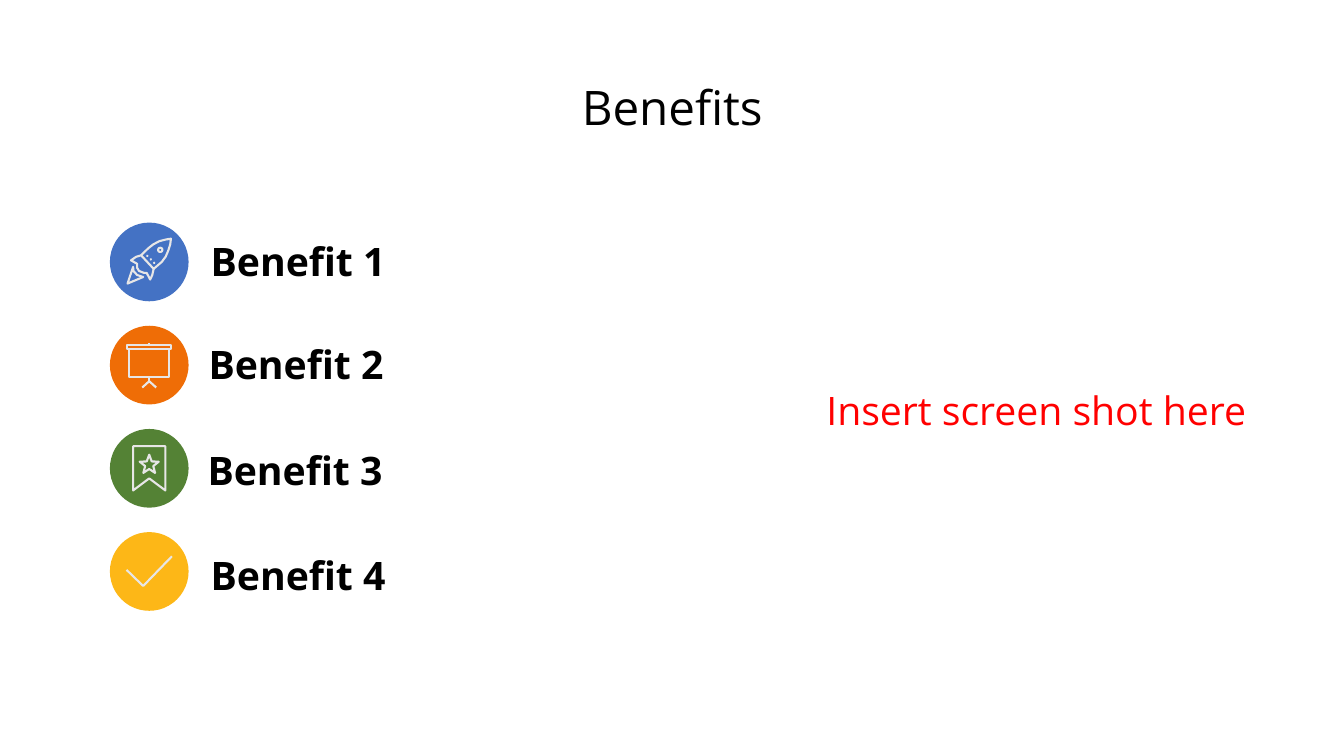
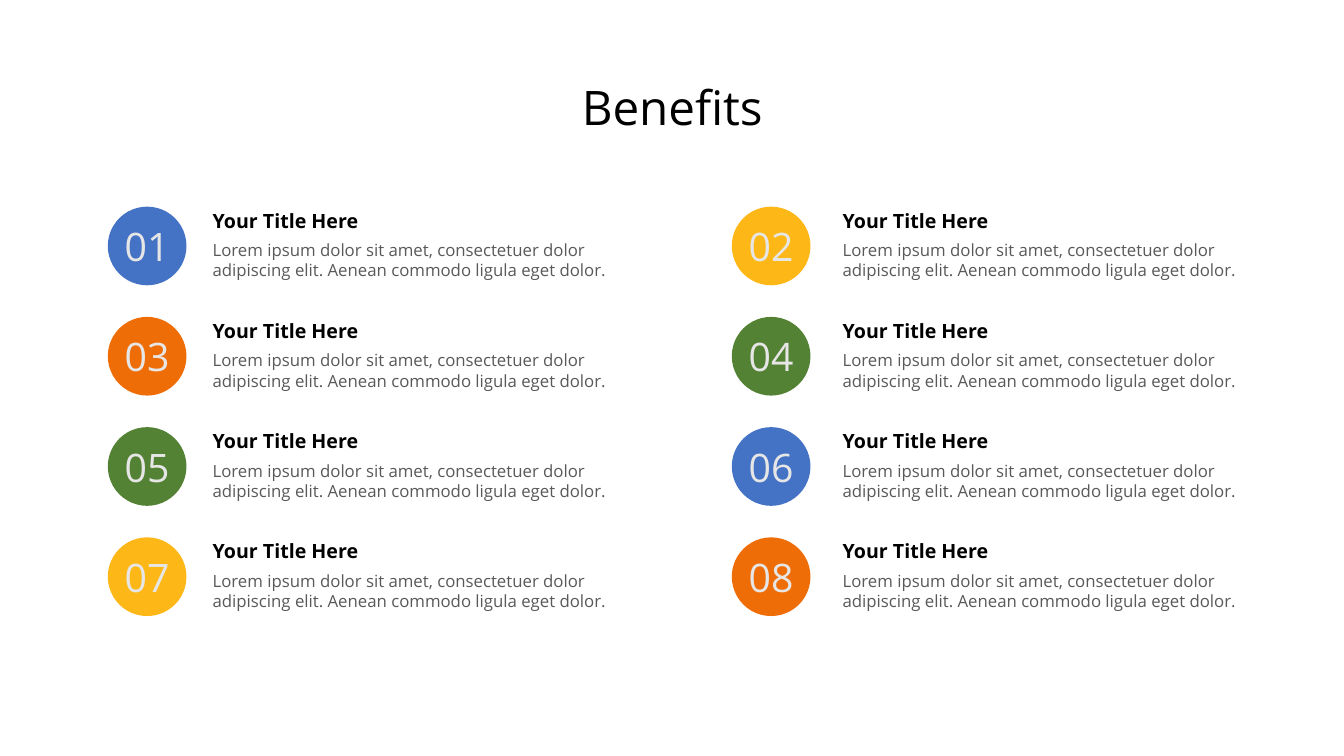
import math
from dataclasses import dataclass

from pptx import Presentation
from pptx import util as u
from pptx.dml.color import RGBColor
from pptx.enum import shapes, text


@dataclass(frozen=True)
class Theme:
    font: str = "Open Sans"
    blue: str = "4472C4"
    orange: str = "EF6D06"
    green: str = "548235"
    yellow: str = "FDB717"
    black: str = "000000"
    grey: str = "595959"
    light: str = "E7E6E6"
    red: str = "FF0000"
    title: int = 34
    large: int = 28
    heading: int = 14
    body: int = 12
    disc: float = 56.2
    icon_line: float = 1.5


theme = Theme()
CENTER = text.PP_ALIGN.CENTER
LEFT = text.PP_ALIGN.LEFT
MIDDLE = text.MSO_ANCHOR.MIDDLE
GROW = text.MSO_AUTO_SIZE.SHAPE_TO_FIT_TEXT
wide_insets = {
    "margin_left": u.Pt(14.4), "margin_right": u.Pt(14.4),
    "margin_top": u.Pt(7.2), "margin_bottom": u.Pt(7.2),
}
label_frame = {"word_wrap": True, "vertical_anchor": MIDDLE, **wide_insets}
title_frame = {"word_wrap": True, "vertical_anchor": MIDDLE, "auto_size": GROW}
note_frame = {"word_wrap": False, "auto_size": GROW}
number_frame = {"word_wrap": False, "vertical_anchor": MIDDLE}


def write_text(shape, words, size, color, frame_format, bold=False, align=LEFT):
    for name, value in frame_format.items():
        setattr(shape.text_frame, name, value)
    paragraph = shape.text_frame.paragraphs[0]
    paragraph.alignment = align
    run = paragraph.add_run()
    run.text = words
    font_format = {"name": theme.font, "size": u.Pt(size), "bold": bold}
    for name, value in font_format.items():
        setattr(run.font, name, value)
    run.font.color.rgb = RGBColor.from_string(color)


def add_disc(slide, left, top, color):
    disc = slide.shapes.add_shape(
        shapes.MSO_SHAPE.OVAL, u.Pt(left), u.Pt(top), u.Pt(theme.disc), u.Pt(theme.disc))
    disc.shadow.inherit = False
    disc.fill.solid()
    disc.fill.fore_color.rgb = RGBColor.from_string(color)
    disc.line.fill.background()
    return disc


presentation = Presentation()
presentation.slide_width = u.Pt(960)
presentation.slide_height = u.Pt(540)
slides = [presentation.slides.add_slide(presentation.slide_layouts[6]) for _ in range(2)]
for slide in slides:
    title = slide.shapes.add_textbox(u.Pt(329), u.Pt(51.8), u.Pt(302.4), u.Pt(48.2))
    write_text(title, "Benefits", theme.title, theme.black, title_frame, align=CENTER)

icon_unit = u.Pt(0.1)
rocket = {
    "closed": [
        [(155, -166), (119, -160), (72, -148), (29, -125), (-7, -97), (-58, -47),
         (32, 50), (90, 0), (118, -38), (137, -83), (150, -125)],
        [(-115, 36), (-155, 155), (-43, 108), (-86, 94), (-112, 65)],
    ],
    "open": [
        [(-58, -47), (-94, -36), (-130, -11), (-86, 14), (-86, 43), (-72, 65),
         (-36, 79), (-18, 79), (7, 126), (22, 94), (32, 50)],
    ],
    "polar": [(79, -86, [15] * 16)] + [(x, y, [1] * 4) for x, y in [(-14, -43), (11, -18), (36, 7)]],
}
board = {
    "closed": [
        [(-158, -144), (158, -144), (158, -115), (-158, -115)],
        [(-144, -115), (144, -115), (144, 86), (-144, 86)],
    ],
    "open": [
        [(0, -156), (0, -144)],
        [(0, 86), (0, 115)],
        [(-50, 160), (0, 115), (50, 160)],
    ],
    "polar": [],
}
bookmark = {
    "closed": [[(-115, -158), (115, -158), (115, 158), (0, 72), (-115, 158)]],
    "open": [],
    "polar": [(0, -25, [72, 30] * 5)],
}
check = {"closed": [], "open": [[(-162, -11), (-43, 104), (162, -108)]], "polar": []}

benefits = [
    ("Benefit 1", theme.blue, rocket, 136.1, 172.8),
    ("Benefit 2", theme.orange, board, 134.6, 246.2),
    ("Benefit 3", theme.green, bookmark, 133.9, 321.8),
    ("Benefit 4", theme.yellow, check, 136.1, 396.7),
]
slide = slides[0]
for row, (words, color, icon, label_left, label_top) in enumerate(benefits):
    left, top = 78.5, 159 + row * 73.7
    add_disc(slide, left, top, color)
    label = slide.shapes.add_textbox(u.Pt(label_left), u.Pt(label_top), u.Pt(314.6), u.Pt(27.4))
    write_text(label, words, theme.large, theme.black, label_frame, bold=True)

    outlines = [(points, True) for points in icon["closed"]]
    outlines += [(points, False) for points in icon["open"]]
    for x, y, radii in icon["polar"]:
        step = 2 * math.pi / len(radii)
        points = [(round(x + radius * math.sin(i * step)), round(y - radius * math.cos(i * step)))
                  for i, radius in enumerate(radii)]
        outlines.append((points, True))
    builder = slide.shapes.build_freeform(*outlines[0][0][0], scale=icon_unit)
    for index, (points, closed) in enumerate(outlines):
        if index:
            builder.move_to(*points[0])
        builder.add_line_segments(points[1:], close=closed)
    drawing = builder.convert_to_shape(u.Pt(left + theme.disc / 2), u.Pt(top + theme.disc / 2))
    drawing.shadow.inherit = False
    drawing.fill.background()
    drawing.line.color.rgb = RGBColor.from_string(theme.light)
    drawing.line.width = u.Pt(theme.icon_line)

note = slide.shapes.add_textbox(u.Pt(583.2), u.Pt(272.2), u.Pt(317.5), u.Pt(41))
write_text(note, "Insert screen shot here", theme.large, theme.red, note_frame)

slide = slides[1]
columns = [(77, 137.5), (522.7, 587.5)]
item_colors = [
    theme.blue, theme.yellow, theme.orange, theme.green,
    theme.green, theme.blue, theme.yellow, theme.orange,
]
lorem = ("Lorem ipsum dolor sit amet, consectetuer dolor adipiscing elit. "
         "Aenean commodo ligula eget dolor.")
for index, color in enumerate(item_colors):
    row, column = divmod(index, 2)
    disc_left, text_left = columns[column]
    top = 147.6 + row * 78.75
    disc = add_disc(slide, disc_left, top, color)
    write_text(disc, f"{index + 1:02}", theme.large, theme.light, number_frame, align=CENTER)
    heading = slide.shapes.add_textbox(u.Pt(text_left), u.Pt(top - 4), u.Pt(314.6), u.Pt(27.4))
    write_text(heading, "Your Title Here", theme.heading, theme.black, label_frame, bold=True)
    body = slide.shapes.add_textbox(u.Pt(text_left), u.Pt(top + 23), u.Pt(314.6), u.Pt(30.2))
    write_text(body, lorem, theme.body, theme.grey, label_frame)

presentation.save("out.pptx")
